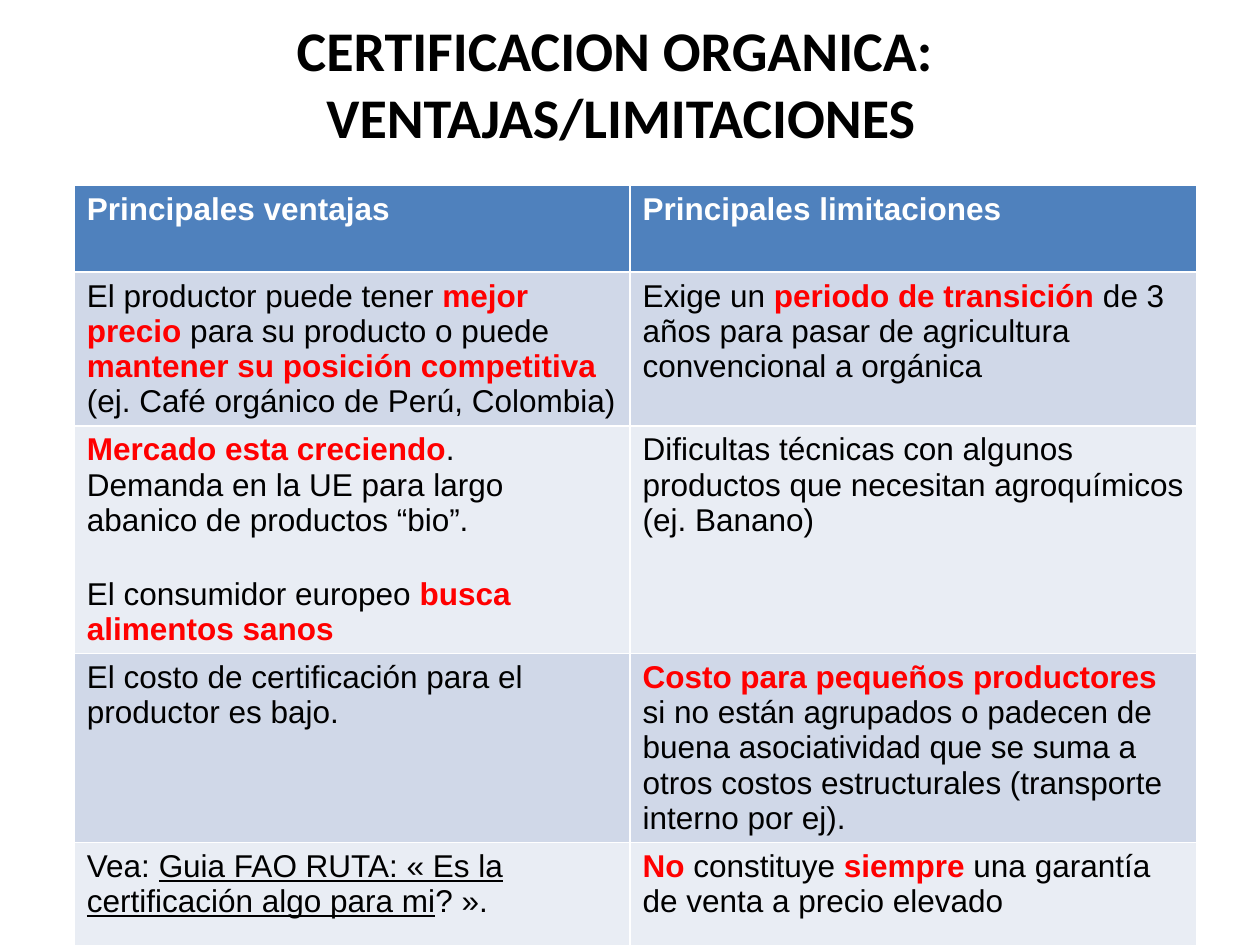
from dataclasses import dataclass

from pptx import Presentation
from pptx.dml.color import RGBColor
from pptx.enum.text import MSO_ANCHOR, PP_ALIGN
from pptx.util import Inches, Pt

MIDDLE = MSO_ANCHOR.MIDDLE
CENTER = PP_ALIGN.CENTER


@dataclass(frozen=True)
class Theme:
    black: RGBColor = RGBColor(0, 0, 0)
    white: RGBColor = RGBColor(255, 255, 255)
    red: RGBColor = RGBColor(255, 0, 0)
    head: RGBColor = RGBColor(0x4F, 0x81, 0xBD)
    bands: tuple = (RGBColor(0xD0, 0xD8, 0xE8), RGBColor(0xE9, 0xED, 0xF4))
    title: Pt = Pt(32)
    body: Pt = Pt(18)
    gap: Pt = Pt(22)


THEME = Theme()


@dataclass(frozen=True)
class Span:
    text: str
    color: RGBColor = THEME.black
    bold: bool = False
    underline: bool = False


@dataclass(frozen=True)
class Para:
    spans: tuple
    before: Pt = Pt(0)


@dataclass(frozen=True)
class Row:
    height: float
    cells: tuple


def key(text: str) -> Span:
    return Span(text, THEME.red, True)


def line(*spans: Span, before: Pt = Pt(0)) -> Para:
    return Para(spans, before)


def head(text: str) -> tuple:
    return (line(Span(text, THEME.white, True)),)


WIDTHS = (4.41, 4.5)
ROWS = (
    Row(0.69, (head("Principales ventajas"), head("Principales limitaciones"))),
    Row(1.22, (
        (line(Span("El productor puede tener "), key("mejor precio "),
              Span("para su producto o puede "),
              key("mantener su posición competitiva"),
              Span(" (ej. Café orgánico de Perú, Colombia)")),),
        (line(Span("Exige un "), key("periodo de transición "),
              Span("de 3 años para pasar de agricultura convencional a orgánica")),),
    )),
    Row(1.8, (
        (line(key("Mercado esta creciendo"), Span(".")),
         line(Span("Demanda en la UE para largo abanico de productos “bio”.")),
         line(Span("El consumidor europeo "), key("busca alimentos sanos"),
              before=THEME.gap)),
        (line(Span("Dificultas técnicas con algunos productos que necesitan "
                   "agroquímicos (ej. Banano)")),),
    )),
    Row(1.5, (
        (line(Span("El costo de certificación para el productor es bajo.")),),
        (line(key("Costo para pequeños productores "),
              Span("si no están agrupados o padecen de buena asociatividad que "
                   "se suma a otros costos estructurales (transporte interno por ej).")),),
    )),
    Row(0.98, (
        (line(Span("Vea: "),
              Span("Guia FAO RUTA: « Es la certificación algo para mi", underline=True),
              Span("? ».")),),
        (line(key("No "), Span("constituye "), key("siempre"),
              Span(" una garantía de venta a precio elevado")),),
    )),
)


def write(para, span: Span, face: str, size: Pt) -> None:
    run = para.add_run()
    run.text = span.text
    style = {"name": face, "size": size, "bold": span.bold, "underline": span.underline}
    for name, value in style.items():
        setattr(run.font, name, value)
    run.font.color.rgb = span.color


def draw_title(slide) -> None:
    title = slide.shapes.title
    place = {"left": 0.43, "top": 0.03, "width": 9, "height": 1.25}
    for name, value in place.items():
        setattr(title, name, Inches(value))
    title.text_frame.vertical_anchor = MIDDLE
    para = title.text_frame.paragraphs[0]
    para.alignment = CENTER
    write(para, Span("CERTIFICACION ORGANICA: ", bold=True), "Calibri", THEME.title)
    para.add_line_break()
    write(para, Span("VENTAJAS/LIMITACIONES", bold=True), "Calibri", THEME.title)


def fill_cell(cell, paras: tuple, color: RGBColor) -> None:
    cell.fill.solid()
    cell.fill.fore_color.rgb = color
    frame = cell.text_frame
    for i, item in enumerate(paras):
        para = frame.add_paragraph() if i else frame.paragraphs[0]
        if item.before:
            para.space_before = item.before
        for span in item.spans:
            write(para, span, "Arial", THEME.body)


def draw_table(slide) -> None:
    high = sum(row.height for row in ROWS)
    table = slide.shapes.add_table(
        len(ROWS), len(WIDTHS), Inches(0.59), Inches(1.47),
        Inches(sum(WIDTHS)), Inches(high)).table
    for col, width in zip(table.columns, WIDTHS):
        col.width = Inches(width)
    for r, row in enumerate(ROWS):
        table.rows[r].height = Inches(row.height)
        color = THEME.bands[(r - 1) % 2] if r else THEME.head
        for c, paras in enumerate(row.cells):
            fill_cell(table.cell(r, c), paras, color)


def main() -> None:
    deck = Presentation()
    deck.slide_width, deck.slide_height = Inches(10), Inches(7.5)
    slide = deck.slides.add_slide(deck.slide_layouts[5])
    draw_title(slide)
    draw_table(slide)
    deck.save("out.pptx")


if __name__ == "__main__":
    main()
